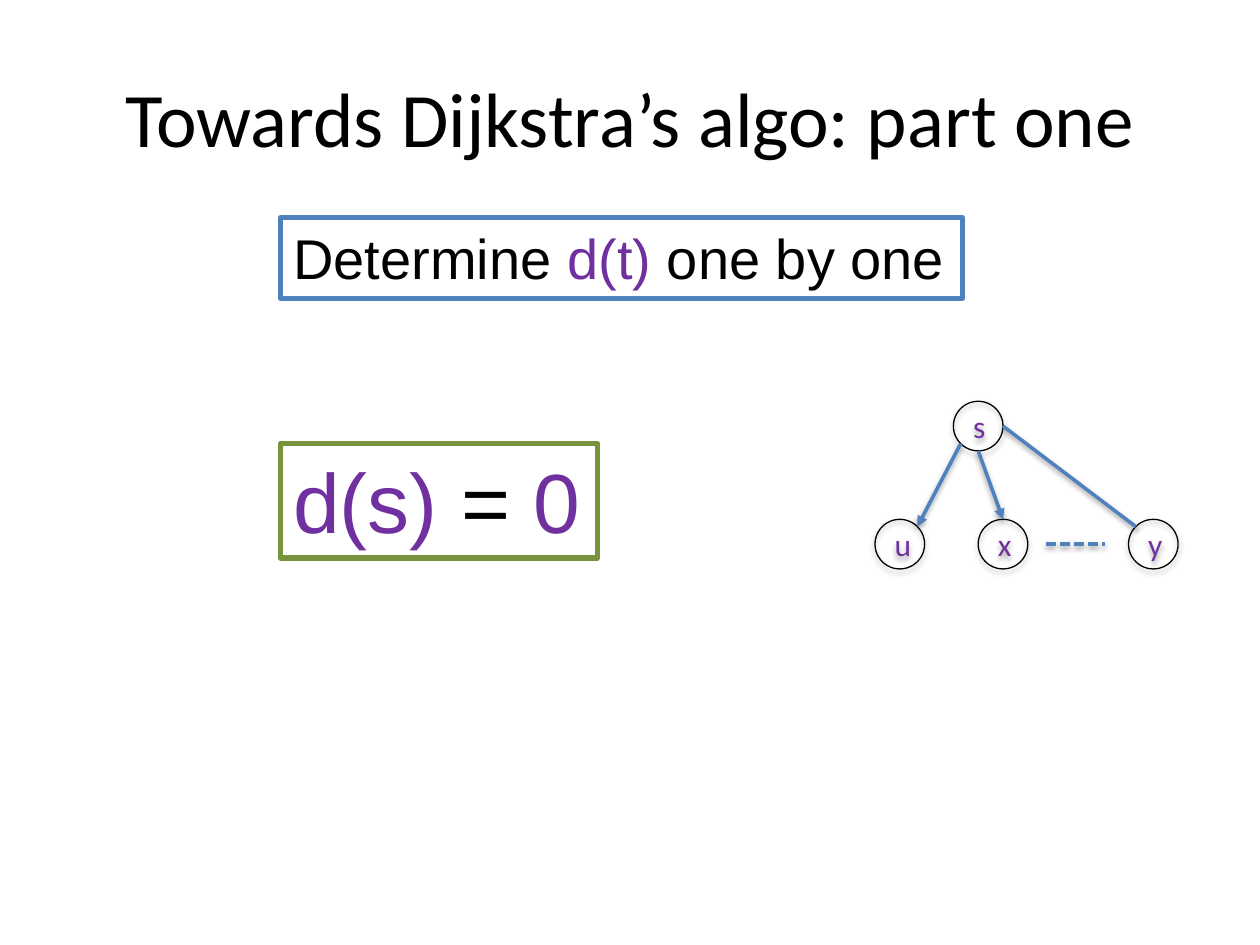
from dataclasses import dataclass
from math import cos, radians, sin

from lxml.etree import SubElement as Sub
from pptx import Presentation
from pptx.dml.color import RGBColor as Rgb
from pptx.enum.dml import MSO_LINE as Dash
from pptx.enum.shapes import MSO_CONNECTOR as Link, MSO_SHAPE as Form
from pptx.enum.text import MSO_ANCHOR as Anchor, MSO_AUTO_SIZE as Fit, PP_ALIGN as Align
from pptx.oxml.ns import qn
from pptx.util import Cm, Pt


@dataclass(frozen=True)
class Theme:
    ink: str = "000000"
    term: str = "7030A0"
    blue: str = "4F81BD"
    green: str = "77933C"
    head: str = "Calibri"
    body: str = "Arial"
    title: int = 44
    large: int = 48
    mid: int = 32
    small: int = 18


LOOK = Theme()
SIZE = 1.0  # node diameter, cm
LOW = 10.97  # centre height of the lower nodes

# Node centres, cm
NODES = {"s": (19.72, 8.59), "u": (18.14, LOW), "x": (20.22, LOW), "y": (23.25, LOW)}

# Start node and angle, end node and angle (clockwise from the right), arrowhead
EDGES = [
    ("s", 135, "u", 315, True),
    ("s", 90, "x", 270, True),
    ("s", 0, "y", 225, False),
]


def apply(item, form):
    for name, value in form.items():
        setattr(item, name, value)


def write(frame, parts, font, size, align=Align.LEFT):
    para = frame.paragraphs[0]
    para.alignment = align
    for text, tint in parts:
        run = para.add_run()
        run.text = text
        apply(run.font, {"name": font, "size": Pt(size)})
        run.font.color.rgb = Rgb.from_string(tint)


def stroke(line, tint, width):
    line.color.rgb = Rgb.from_string(tint)
    line.width = Pt(width)


def shade(shape, dist, alpha):
    """Drop a soft shadow straight down."""
    props = shape._element.spPr
    for old in props.findall(qn("a:effectLst")):
        props.remove(old)
    cast = Sub(Sub(props, qn("a:effectLst")), qn("a:outerShdw"),
               blurRad="40000", dist=str(dist), dir="5400000", rotWithShape="0")
    tint = Sub(cast, qn("a:srgbClr"), val=LOOK.ink)
    Sub(tint, qn("a:alpha"), val=str(alpha * 1000))


def set_title(slide, text):
    title = slide.shapes.title
    apply(title, {"left": Cm(1.27), "top": Cm(0.76), "width": Cm(22.86), "height": Cm(3.18)})
    title.text_frame.vertical_anchor = Anchor.MIDDLE
    write(title.text_frame, [(text, LOOK.ink)], LOOK.head, LOOK.title, Align.CENTER)


def add_box(slide, area, parts, size, tint):
    box = slide.shapes.add_textbox(*map(Cm, area))
    stroke(box.line, tint, 3)
    apply(box.text_frame, {"word_wrap": False, "auto_size": Fit.SHAPE_TO_FIT_TEXT})
    write(box.text_frame, parts, LOOK.body, size)


def add_node(slide, name, spot):
    left, top = (Cm(value - SIZE / 2) for value in spot)
    node = slide.shapes.add_shape(Form.OVAL, left, top, Cm(SIZE), Cm(SIZE))
    node.fill.background()
    stroke(node.line, LOOK.ink, 0.75)
    shade(node, 23000, 35)
    node.text_frame.vertical_anchor = Anchor.MIDDLE
    write(node.text_frame, [(name, LOOK.term)], LOOK.head, LOOK.small, Align.CENTER)


def rim(name, angle):
    """Point on a node's outline."""
    x, y = NODES[name]
    turn = radians(angle)
    return x + SIZE / 2 * cos(turn), y + SIZE / 2 * sin(turn)


def add_edge(slide, start, end, arrow=False, dash=None):
    edge = slide.shapes.add_connector(Link.STRAIGHT, *map(Cm, (*start, *end)))
    stroke(edge.line, LOOK.blue, 2)
    if dash:
        edge.line.dash_style = dash
    if arrow:
        Sub(edge.line._get_or_add_ln(), qn("a:tailEnd"), type="triangle")
    shade(edge, 20000, 38)


def main():
    deck = Presentation()
    apply(deck, {"slide_width": Cm(25.4), "slide_height": Cm(19.05)})
    slide = deck.slides.add_slide(deck.slide_layouts[5])

    # Title and goal
    set_title(slide, "Towards Dijkstra’s algo: part one")
    goal = [("Determine ", LOOK.ink), ("d(t)", LOOK.term), (" one by one", LOOK.ink)]
    add_box(slide, (5.66, 4.39, 13.74, 1.63), goal, LOOK.mid, LOOK.blue)

    # Graph
    for name, spot in NODES.items():
        add_node(slide, name, spot)
    for first, out, last, into, arrow in EDGES:
        add_edge(slide, rim(first, out), rim(last, into), arrow)
    add_edge(slide, (21.08, LOW), (22.28, LOW), dash=Dash.SQUARE_DOT)

    # Base case
    base = [("d(s) ", LOOK.term), ("= ", LOOK.ink), ("0", LOOK.term)]
    add_box(slide, (5.66, 8.94, 6.38, 2.31), base, LOOK.large, LOOK.green)

    deck.save("out.pptx")


if __name__ == "__main__":
    main()
